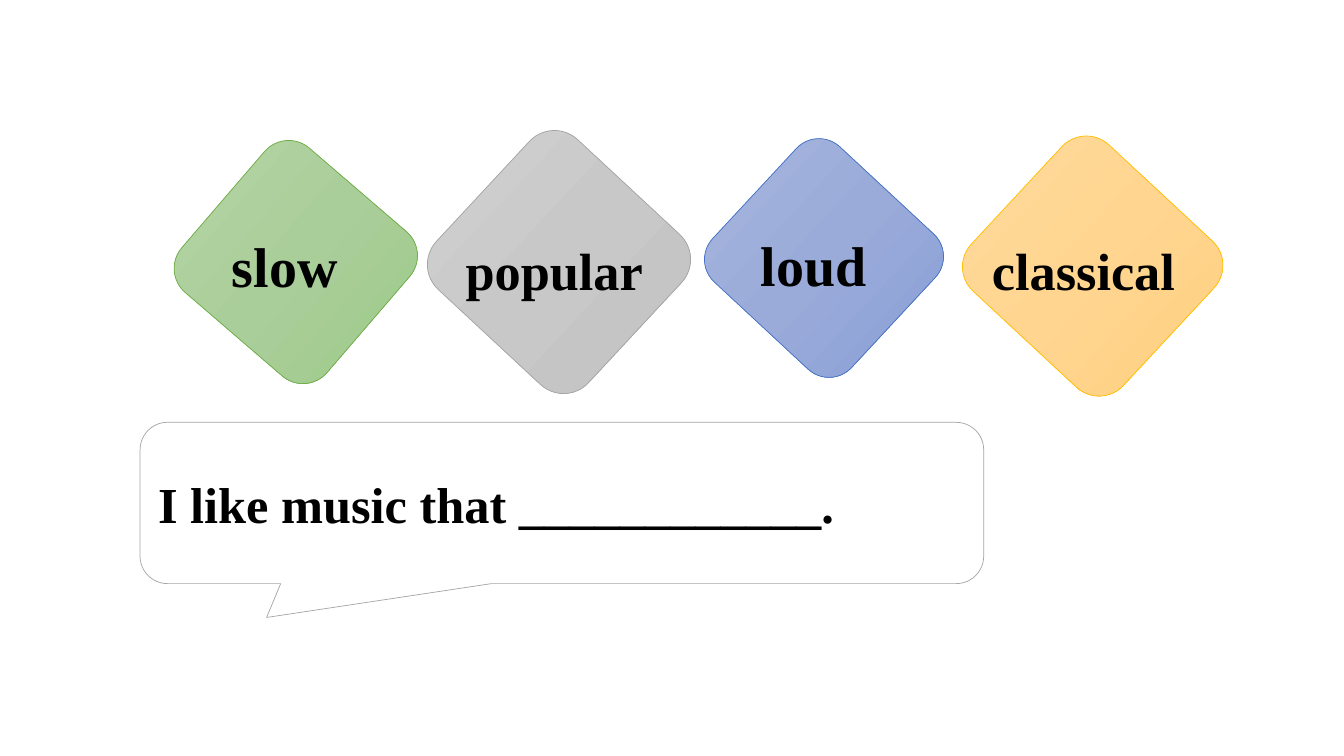
from copy import deepcopy
from pptx import Presentation
from pptx.dml.color import RGBColor
from pptx.enum.shapes import MSO_SHAPE
from pptx.enum.text import MSO_ANCHOR, PP_ALIGN
from pptx.util import Pt

TILE = MSO_SHAPE.FLOWCHART_ALTERNATE_PROCESS
BUBBLE = MSO_SHAPE.ROUNDED_RECTANGULAR_CALLOUT
TOP, MIDDLE = MSO_ANCHOR.TOP, MSO_ANCHOR.MIDDLE
LEFT = PP_ALIGN.LEFT
FONT = "Times New Roman"

COLORS = {
    "black": "000000",
    "white": "FFFFFF",
    "green": "70AD47",
    "blue": "4472C4",
    "gold": "FFC000",
    "gray": "A5A5A5",
}
# Gradient stops at 0, 50 and 100 percent
SHADES = {
    "green": ("B5D5A7", "AACE9A", "9CC987"),
    "blue": ("A8B7DF", "9AABD9", "889ED7"),
    "gold": ("FFDB9E", "FFD590", "FFD07C"),
    "gray": ("D2D2D2", "C8C8C8", "C0C0C0"),
}
# word, colour, text size, tile box, tile turn, label box
WORDS = [
    ("slow", "green", 40, (143.3, 118.8, 136, 136.8), 310.7,
     (155.5, 153.4, 112.3, 62.6)),
    ("loud", "blue", 40, (522.7, 116.6, 131.8, 135.4), 312.9,
     (533.5, 152.6, 110.9, 61.9)),
    ("classical", "gold", 37.4, (709.2, 115.9, 142.6, 148.3), 312.9,
     (698.4, 157.7, 161.3, 63.4)),
    ("popular", "gray", 37.4, (326.2, 113, 146.2, 148.3), 312.9,
     (322.6, 158.4, 156.2, 58.3)),
]


def add_box(parent, kind, box, edge=None):
    shape = parent.shapes.add_shape(kind, *[Pt(n) for n in box])
    shape.shadow.inherit = False
    if edge:
        shape.line.color.rgb = RGBColor.from_string(COLORS[edge])
        shape.line.width = Pt(0.5)
    else:
        shape.line.fill.background()
    return shape


def add_text(shape, text, size, anchor):
    frame = shape.text_frame
    frame.word_wrap = True
    frame.vertical_anchor = anchor
    para = frame.paragraphs[0]
    para.alignment = LEFT
    run = para.add_run()
    run.text = text
    run.font.name = FONT
    run.font.size = Pt(size)
    run.font.bold = True
    run.font.color.rgb = RGBColor.from_string(COLORS["black"])


prs = Presentation()
prs.slide_width, prs.slide_height = Pt(960), Pt(540)
slide = prs.slides.add_slide(prs.slide_layouts[6])

for word, hue, size, box, turn, spot in WORDS:
    group = slide.shapes.add_group_shape()
    tile = add_box(group, TILE, box, hue)
    tile.rotation = turn
    tile.fill.gradient()
    tile.fill.gradient_angle = 270
    first = tile.fill._fill._gradFill.gsLst[0]
    first.addnext(deepcopy(first))
    for stop, place, shade in zip(tile.fill.gradient_stops, (0, 0.5, 1), SHADES[hue]):
        stop.position = place
        stop.color.rgb = RGBColor.from_string(shade)

    label = add_box(group, TILE, spot)
    label.fill.background()
    label.text_frame.margin_top = Pt(9)
    add_text(label, word, size, TOP)

bubble = add_box(slide, BUBBLE, (100.1, 301.7, 602.6, 115.2), "gray")
for i, value in enumerate((-0.35, 0.71, 0.17)):
    bubble.adjustments[i] = value
bubble.fill.solid()
bubble.fill.fore_color.rgb = RGBColor.from_string(COLORS["white"])
add_text(bubble, "I like music that ____________.", 36, MIDDLE)

prs.save("out.pptx")
